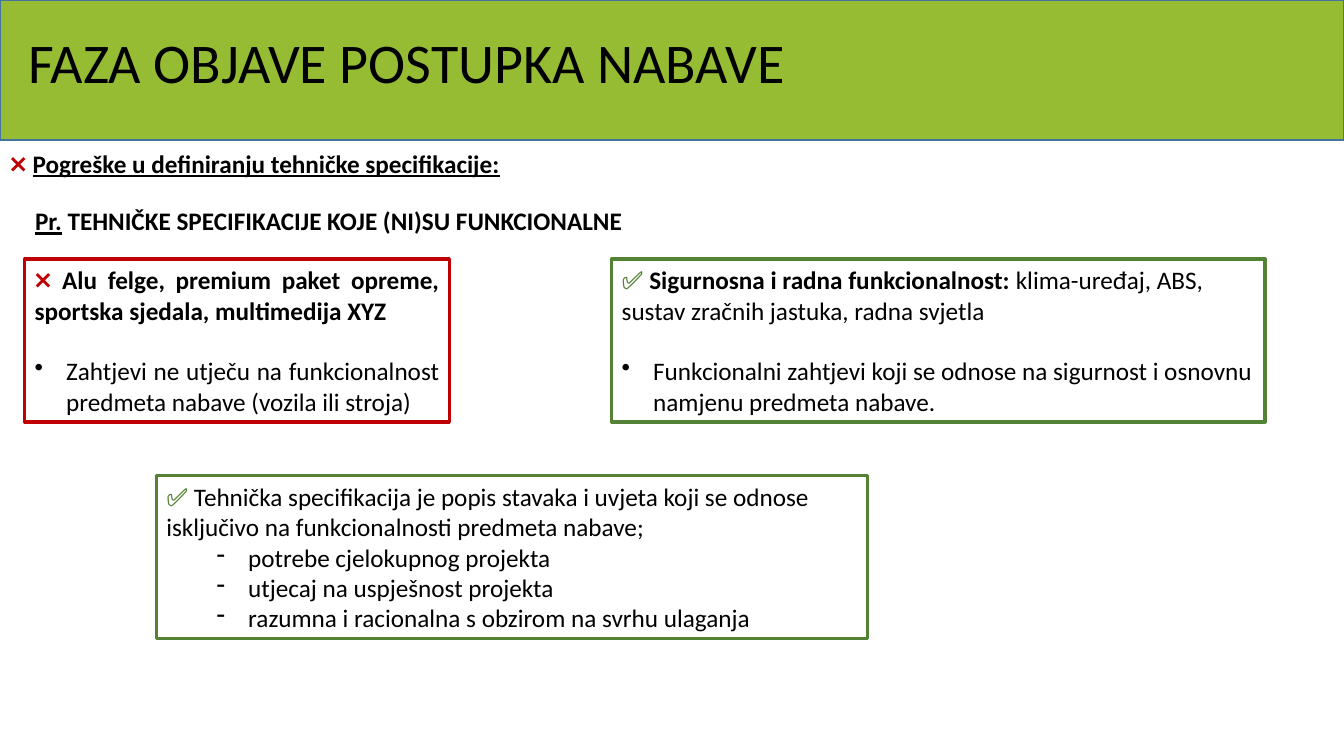
import pptx
import pptx.dml.color
import pptx.enum.shapes
import pptx.enum.text
import pptx.oxml.ns
import pptx.util
from lxml import etree

Pt = pptx.util.Pt
RGBColor = pptx.dml.color.RGBColor
ALIGN = pptx.enum.text.PP_ALIGN
ANCHOR = pptx.enum.text.MSO_ANCHOR

BLACK = RGBColor(0x00, 0x00, 0x00)
LIME = RGBColor(0x96, 0xBC, 0x33)
BLUE = RGBColor(0x43, 0x73, 0x9E)
GREEN = RGBColor(0x54, 0x82, 0x35)
RED = RGBColor(0xC0, 0x00, 0x00)


def run(text, color=BLACK, bold=False, underline=False):
    return text, color, bold, underline


class Deck:
    font = "Calibri"
    size = 18
    hang = 22.5

    def __init__(self, prs):
        self.s = prs.slides.add_slide(prs.slide_layouts[6])

    def rect(self, x, y, w, h, line, width, fill=None):
        sp = self.s.shapes.add_shape(
            pptx.enum.shapes.MSO_SHAPE.RECTANGLE, Pt(x), Pt(y), Pt(w), Pt(h))
        sp.shadow.inherit = False
        if fill is None:
            sp.fill.background()
        else:
            sp.fill.solid()
            sp.fill.fore_color.rgb = fill
        sp.line.color.rgb = line
        sp.line.width = Pt(width)
        return sp

    def paragraph(self, tf, runs, size=None, align=ALIGN.LEFT, bullet=None,
                  level=0, before=0):
        p = tf.paragraphs[0]
        if p.runs:
            p = tf.add_paragraph()
        p.level = level
        p.alignment = align
        if bullet:
            pPr = p._p.get_or_add_pPr()
            pPr.set("marL", str(Pt(level * 36 + self.hang)))
            pPr.set("indent", str(-Pt(self.hang)))
            bu = etree.SubElement(pPr, pptx.oxml.ns.qn("a:buChar"))
            bu.set("char", bullet)
        if before:
            p.space_before = Pt(before)
        for text, color, bold, underline in runs:
            r = p.add_run()
            r.text = text
            r.font.name = self.font
            r.font.size = Pt(size or self.size)
            r.font.color.rgb = color
            r.font.bold = bold
            r.font.underline = underline
        return p

    def label(self, x, y, w, h, runs, size=None, wrap=False, anchor=ANCHOR.TOP):
        tf = self.s.shapes.add_textbox(Pt(x), Pt(y), Pt(w), Pt(h)).text_frame
        tf.word_wrap = wrap
        tf.vertical_anchor = anchor
        return self.paragraph(tf, runs, size)

    def box(self, x, y, w, h, line, lead, items, bullet, level=0, gap=0,
            align=ALIGN.LEFT):
        tf = self.rect(x, y, w, h, line, 2.25).text_frame
        tf.word_wrap = True
        tf.vertical_anchor = ANCHOR.MIDDLE
        self.paragraph(tf, lead, align=align)
        for item in items:
            self.paragraph(tf, [run(item)], align=align, bullet=bullet,
                           level=level, before=gap)


def main():
    prs = pptx.Presentation()
    prs.slide_width, prs.slide_height = Pt(960), Pt(540)
    d = Deck(prs)

    # Title band
    d.rect(0, 0, 960, 100, BLUE, 1, LIME)
    title = d.label(13, 14.4, 907, 64, [run("FAZA OBJAVE POSTUPKA NABAVE")],
                    size=40, wrap=True, anchor=ANCHOR.MIDDLE)
    title.line_spacing = 0.9

    # Headings
    d.label(0, 102.4, 382, 29, [
        run("❌ ", RED, True),
        run("Pogreške u definiranju tehničke specifikacije:", BLACK, True, True)])
    d.label(18, 143.3, 438, 29, [
        run("Pr.", BLACK, True, True),
        run(" TEHNIČKE SPECIFIKACIJE KOJE (NI)SU FUNKCIONALNE", BLACK, True)])

    # Wrong and right example
    d.box(17.7, 185, 303.3, 116.5, RED, [
        run("❌", RED, True),
        run(" Alu felge, premium paket opreme, sportska sjedala, "
            "multimedija XYZ", BLACK, True)],
        ["Zahtjevi ne utječu na funkcionalnost predmeta nabave "
         "(vozila ili stroja)"],
        "•", gap=21.8, align=ALIGN.JUSTIFY)
    d.box(437, 185, 466.7, 116.5, GREEN, [
        run("✅", GREEN, True),
        run(" Sigurnosna i radna funkcionalnost: ", BLACK, True),
        run("klima-uređaj, ABS, sustav zračnih jastuka, radna svjetla")],
        ["Funkcionalni zahtjevi koji se odnose na sigurnost i osnovnu "
         "namjenu predmeta nabave."],
        "•", gap=21.8)

    # Summary
    d.box(111.7, 339.7, 507.8, 116.5, GREEN, [
        run("✅ ", GREEN, True),
        run("Tehnička specifikacija je popis stavaka i uvjeta koji se odnose "
            "isključivo na funkcionalnosti predmeta nabave;")],
        ["potrebe cjelokupnog projekta",
         "utjecaj na uspješnost projekta",
         "razumna i racionalna s obzirom na svrhu ulaganja"],
        "-", level=1)

    prs.save("out.pptx")


if __name__ == "__main__":
    main()
